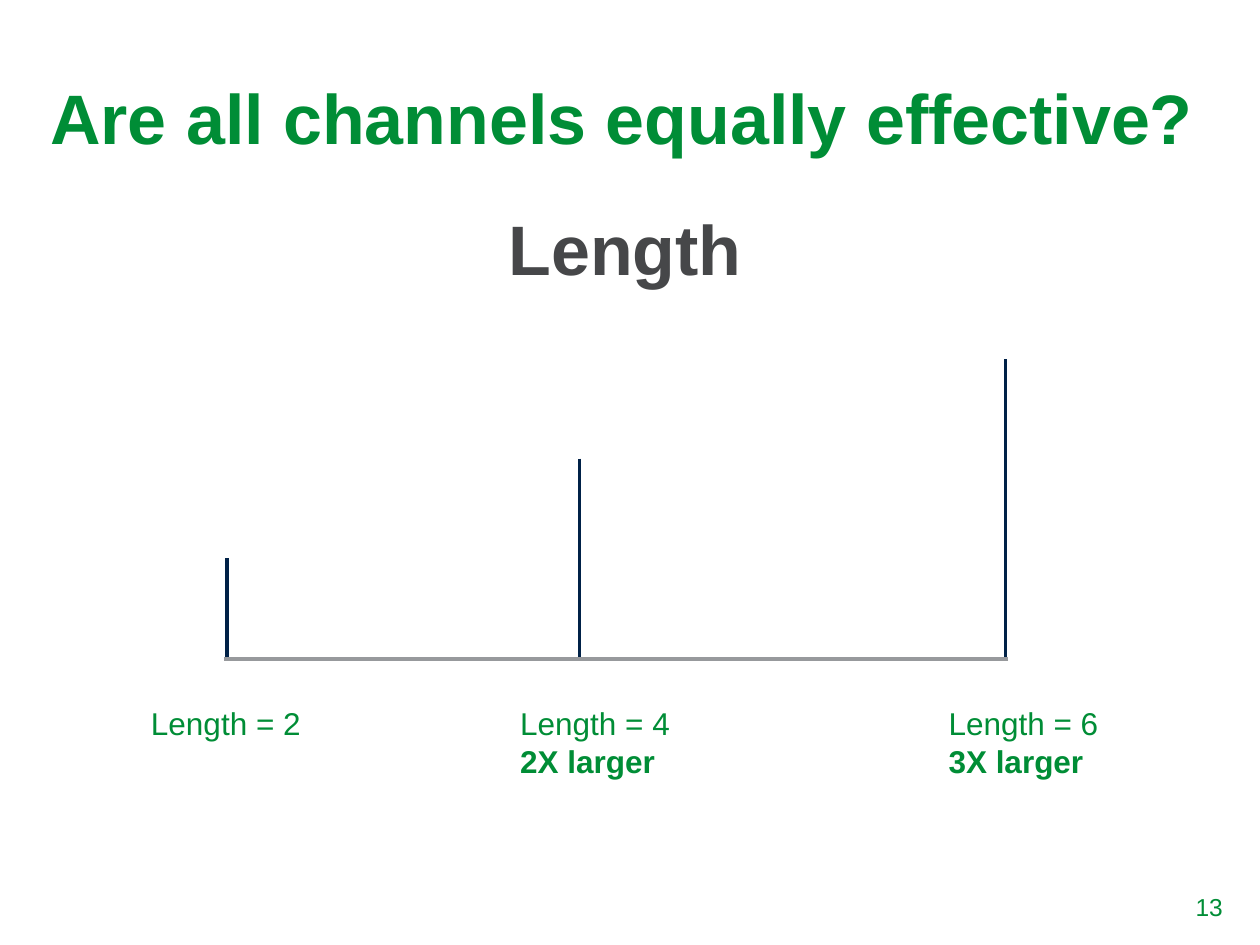
import pptx
import pptx.util
import pptx.dml.color
import pptx.enum.shapes
import pptx.enum.text
import lxml.etree
import pptx.oxml.ns

PX = 9144  # EMU per px, 100 px to the inch
FONT = "Arial"
HUES = {"green": "008D36", "navy": "002147", "dark": "464749", "gray": "97999C"}
ANCHOR = pptx.enum.text.MSO_ANCHOR
ALIGN = pptx.enum.text.PP_ALIGN
FIT = pptx.enum.text.MSO_AUTO_SIZE


def color(name):
    return pptx.dml.color.RGBColor.from_string(HUES[name])


def write(para, text, size=18, hue="green", bold=False):
    run = para.add_run()
    run.text = text
    font = run.font
    font.name, font.size, font.bold = FONT, pptx.util.Pt(size), bold
    font.color.rgb = color(hue)


class Board:
    def __init__(self, deck):
        self.slide = deck.slides.add_slide(deck.slide_layouts[6])

    def box(self, area, anchor, pad=True):
        shape = self.slide.shapes.add_textbox(*(n * PX for n in area))
        frame = shape.text_frame
        frame.word_wrap = True
        frame.vertical_anchor = anchor
        if not pad:
            frame.margin_left = frame.margin_right = 0
            frame.margin_top = frame.margin_bottom = 0
        return frame

    def title(self, area, text, hue, align):
        para = self.box(area, ANCHOR.BOTTOM, pad=False).paragraphs[0]
        para.alignment = align
        para.line_spacing = 0.8
        write(para, text, size=40, hue=hue, bold=True)

    def label(self, area, lines):
        frame = self.box(area, ANCHOR.TOP)
        frame.word_wrap = False
        frame.auto_size = FIT.SHAPE_TO_FIT_TEXT
        for i, text in enumerate(lines):
            para = frame.add_paragraph() if i else frame.paragraphs[0]
            write(para, text, bold=i > 0)

    def number(self, area, text):
        write(self.box(area, ANCHOR.MIDDLE).paragraphs[0], text, size=14)

    def line(self, start, end, hue):
        kind = pptx.enum.shapes.MSO_CONNECTOR.STRAIGHT
        line = self.slide.shapes.add_connector(kind, *(n * PX for n in start + end))
        line.line.color.rgb = color(hue)
        line.line.width = pptx.util.Pt(2)
        props = line._element.spPr
        lxml.etree.SubElement(props, pptx.oxml.ns.qn("a:effectLst"))


def main():
    deck = pptx.Presentation()
    deck.slide_width, deck.slide_height = 1000 * PX, 750 * PX
    board = Board(deck)

    # Titles
    board.title((40, 23, 924, 102), "Are all channels equally effective?",
                "green", ALIGN.LEFT)
    board.title((34, 136, 924, 93), "Length", "dark", ALIGN.CENTER)

    # Bars and their labels: length, bar x, label x
    base, unit = 522, 79
    for size, x, left in ((1, 180, 110), (2, 460, 403), (3, 798, 743)):
        board.line((x, base - size * unit), (x, base), "navy")
        lines = [f"Length = {2 * size}"]
        if size > 1:
            lines.append(f"{size}X larger")
        board.label((left, 554, 140, 40 if size == 1 else 71), lines)

    # Baseline
    board.line((800, 523), (178, 523), "gray")

    # Page number
    board.number((939, 700, 61, 40), "13")

    deck.save("out.pptx")


if __name__ == "__main__":
    main()
